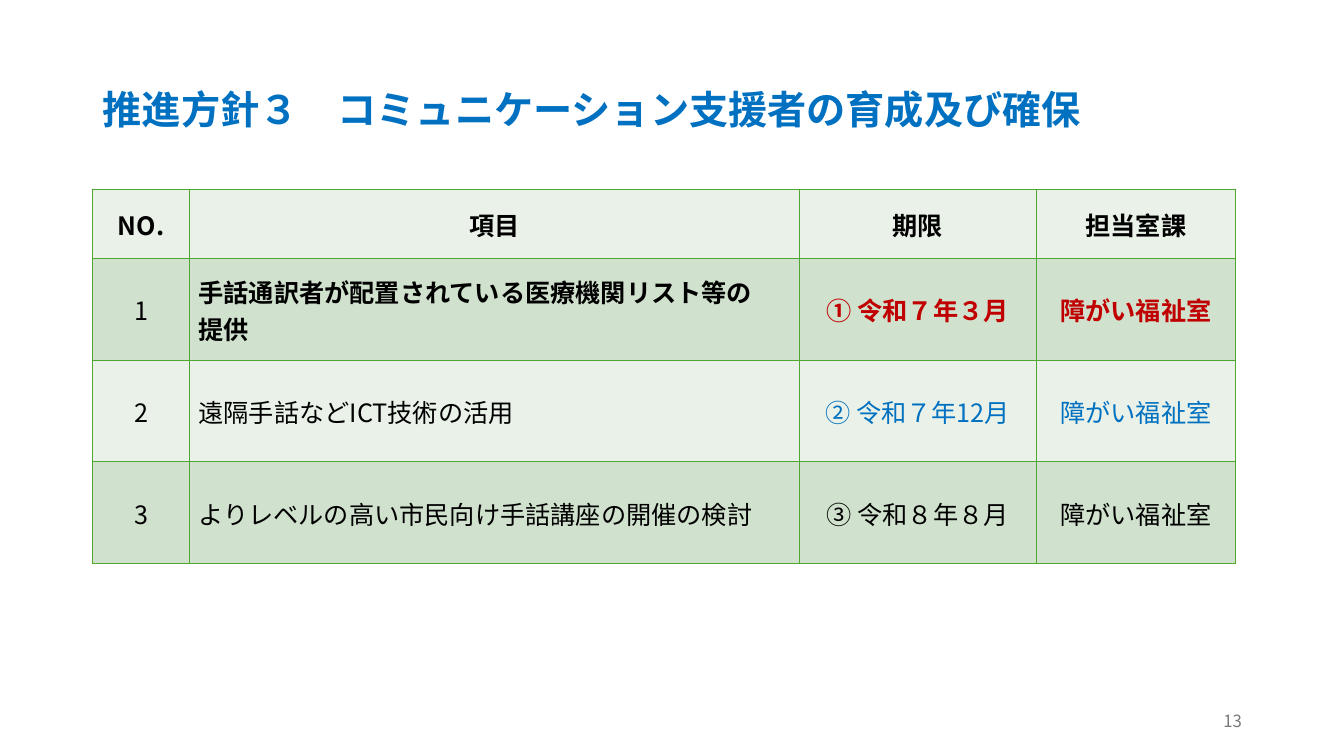
import pptx
import pptx.util
import pptx.dml.color
import pptx.enum.text
import pptx.oxml
import pptx.oxml.ns

Pt = pptx.util.Pt
RGB = pptx.dml.color.RGBColor
Align = pptx.enum.text.PP_ALIGN
Anchor = pptx.enum.text.MSO_ANCHOR

BLUE = RGB(0x00, 0x70, 0xC0)
RED = RGB(0xC0, 0x00, 0x00)
BLACK = RGB(0x00, 0x00, 0x00)
GRAY = RGB(0x79, 0x79, 0x79)
GREEN = RGB(0x4E, 0xA7, 0x2E)
PALE = RGB(0xE9, 0xF1, 0xE8)
SAGE = RGB(0xD0, 0xE1, 0xCD)


class Page:
    """Holds the text style and the slide being drawn."""

    face = "Noto Sans CJK JP"
    inset = dict(margin_left=Pt(0.72), margin_right=Pt(0.72),
                 margin_top=Pt(0.72), margin_bottom=Pt(0),
                 vertical_anchor=Anchor.MIDDLE)

    def __init__(self, deck):
        self.slide = deck.slides.add_slide(deck.slide_layouts[5])

    def apply(self, item, style):
        for key, value in style.items():
            setattr(item, key, value)

    def letter(self, frame, text, size, color, bold=False,
               align=Align.LEFT, indent=0, **para):
        frame.text = text
        for line in frame.paragraphs:
            self.apply(line, dict(alignment=align, **para))
            if indent:
                props = line._p.get_or_add_pPr()
                props.set("marL", str(Pt(indent)))
                props.set("indent", "0")
            for run in line.runs:
                self.apply(run.font, dict(name=self.face, size=Pt(size),
                                          bold=bold))
                run.font.color.rgb = color
                east = pptx.oxml.parse_xml(
                    f'<a:ea {pptx.oxml.ns.nsdecls("a")} '
                    f'typeface="{self.face}"/>')
                run.font._element.find(
                    pptx.oxml.ns.qn("a:latin")).addnext(east)

    def title(self, text, left, top, width, height):
        shape = self.slide.shapes.title
        self.apply(shape, dict(left=Pt(left), top=Pt(top),
                               width=Pt(width), height=Pt(height)))
        shape.text_frame.vertical_anchor = Anchor.TOP
        self.letter(shape.text_frame, text, 28, BLUE, True,
                    line_spacing=0.9)

    def label(self, text, left, top, width, height):
        box = self.slide.shapes.add_textbox(
            Pt(left), Pt(top), Pt(width), Pt(height))
        self.apply(box.text_frame, dict(word_wrap=True,
                                        vertical_anchor=Anchor.MIDDLE))
        self.letter(box.text_frame, text, 12, GRAY, align=Align.RIGHT)

    def border(self, cell):
        props = cell._tc.get_or_add_tcPr()
        for side in "LRTB":
            props.append(pptx.oxml.parse_xml(
                f'<a:ln{side} {pptx.oxml.ns.nsdecls("a")} w="{Pt(1)}">'
                f'<a:solidFill><a:srgbClr val="{GREEN}"/></a:solidFill>'
                f'</a:ln{side}>'))

    def table(self, rows, left, top, widths, heights):
        grid = self.slide.shapes.add_table(
            len(rows), len(widths), Pt(left), Pt(top),
            Pt(sum(widths)), Pt(sum(heights))).table
        self.apply(grid, dict(first_row=False, horz_banding=False))
        for col, width in zip(grid.columns, widths):
            col.width = Pt(width)
        for row, height in zip(grid.rows, heights):
            row.height = Pt(height)
        for r, (texts, bolds, color) in enumerate(rows):
            for c, text in enumerate(texts):
                cell = grid.cell(r, c)
                self.apply(cell, self.inset)
                self.border(cell)
                cell.fill.solid()
                cell.fill.fore_color.rgb = SAGE if r % 2 else PALE
                item = r > 0 and c == 1
                self.letter(cell.text_frame, text, 18,
                            color if c > 1 else BLACK, c in bolds,
                            Align.LEFT if item else Align.CENTER,
                            5.76 if item else 0)


def main():
    deck = pptx.Presentation()
    deck.slide_width, deck.slide_height = Pt(960), Pt(540)
    page = Page(deck)

    # Heading
    page.title("推進方針３　コミュニケーション支援者の育成及び確保",
               66.24, 61.2, 862, 50)

    # Action items: texts, bold columns, colour of date and office
    office = "障がい福祉室"
    rows = [
        (("NO.", "項目", "期限", "担当室課"), (0, 1, 2, 3), BLACK),
        (("1", "手話通訳者が配置されている医療機関リスト等の\n提供",
          "① 令和７年３月", office), (1, 2, 3), RED),
        (("2", "遠隔手話などICT技術の活用", "② 令和７年12月", office),
         (), BLUE),
        (("3", "よりレベルの高い市民向け手話講座の開催の検討",
          "③ 令和８年８月", office), (), BLACK),
    ]
    page.table(rows, 66.24, 135.36, (69.1, 435.6, 169.2, 142.6),
               [49.4] + [72.6] * 3)

    # Page number
    page.label("13", 678.24, 500.4, 216, 28.8)

    deck.save("out.pptx")


if __name__ == "__main__":
    main()
